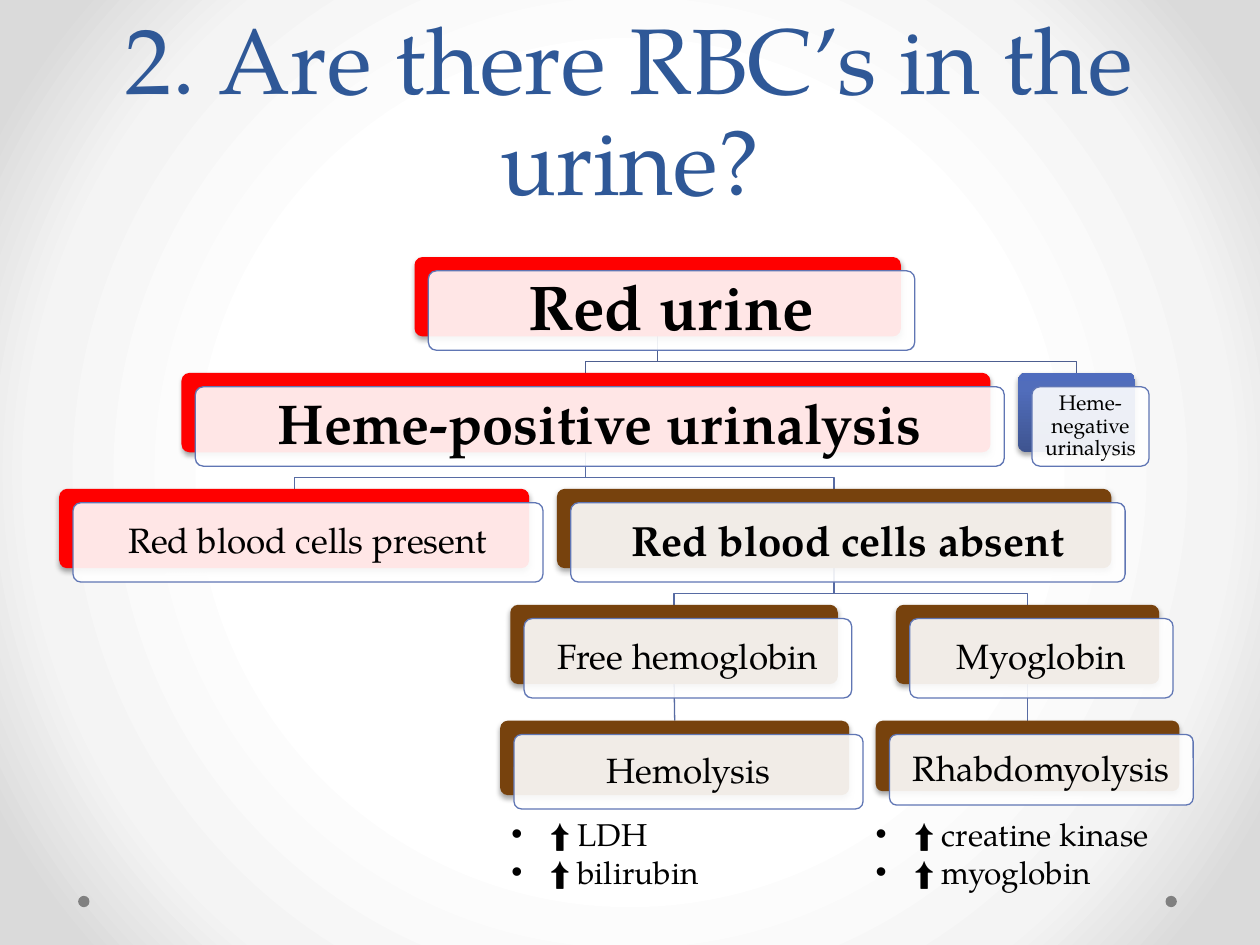
from lxml import etree
from pptx import Presentation
from pptx.dml.color import RGBColor
from pptx.enum.dml import MSO_LINE
from pptx.enum.shapes import MSO_CONNECTOR, MSO_SHAPE
from pptx.enum.text import MSO_ANCHOR, MSO_AUTO_SIZE, PP_ALIGN
from pptx.oxml import parse_xml
from pptx.oxml.ns import qn
from pptx.util import Inches, Pt

ROUNDED, OVAL = MSO_SHAPE.ROUNDED_RECTANGLE, MSO_SHAPE.OVAL
STRAIGHT, SOLID = MSO_CONNECTOR.STRAIGHT, MSO_LINE.SOLID
MIDDLE, BOTTOM = MSO_ANCHOR.MIDDLE, MSO_ANCHOR.BOTTOM
CENTER, LEFT = PP_ALIGN.CENTER, PP_ALIGN.LEFT
FIT_SHAPE = MSO_AUTO_SIZE.SHAPE_TO_FIT_TEXT
FONT, ARROW_FONT = "TeX Gyre Pagella", "Arial"
BLACK = RGBColor(0, 0, 0)
WHITE = RGBColor(255, 255, 255)
GRAY = RGBColor(0x80, 0x80, 0x80)
TITLE_BLUE = RGBColor(0x2F, 0x58, 0x97)
RED = RGBColor(0xFF, 0, 0)
BROWN = RGBColor(0x77, 0x42, 0x0D)
OUTLINE = RGBColor(0x60, 0x76, 0xB4)
TOP_BRANCH = RGBColor(0x4D, 0x5E, 0x90)
BRANCH = RGBColor(0x57, 0x6B, 0xA3)
DRAWING = 'xmlns:a="http://schemas.openxmlformats.org/drawingml/2006/main"'
RADIAL = ('<a:path path="circle"><a:fillToRect l="50000" t="50000" '
          'r="50000" b="50000"/></a:path>')
UPWARD = '<a:lin ang="16200000" scaled="0"/>'
PAGE_STOPS = [(50, "FFFFFF"), (76, "F4F4F4"), (92, "DADADA")]
BLUE_STOPS = [(0, "3E5490"), (80, "516DBB"), (100, "4F6CBE")]
FIRST_TOP, ROW_STEP, OFFSET = 2.04, 0.92, 0.11

# name: (row, left, width, height, color, size, bold, inset)
NODES = {
    "Red urine": (0, 3.29, 3.86, 0.63, RED, 36, True, 0.15),
    "Heme-positive urinalysis": (1, 1.44, 6.42, 0.63, RED, 32, True, 0.13),
    "Red blood cells present": (2, 0.47, 3.73, 0.63, RED, 20, False, 0.08),
    "Red blood cells absent": (2, 4.42, 4.4, 0.63, BROWN, 24, True, 0.1),
    "Free hemoglobin": (3, 4.05, 2.6, 0.63, BROWN, 20, False, 0.08),
    "Hemolysis": (4, 3.97, 2.77, 0.59, BROWN, 20, False, 0.08),
    "Myoglobin": (3, 7.11, 2.09, 0.63, BROWN, 20, False, 0.08),
    "Rhabdomyolysis": (4, 6.95, 2.41, 0.56, BROWN, 20, False, 0.08),
    "Heme-negative urinalysis": (1, 8.08, 0.93, 0.63, None, 12, False, 0.05),
}
ELBOWS = [
    ("Red urine", "Heme-negative urinalysis", TOP_BRANCH),
    ("Red blood cells absent", "Myoglobin", BRANCH),
    ("Red blood cells absent", "Free hemoglobin", BRANCH),
    ("Heme-positive urinalysis", "Red blood cells absent", BRANCH),
    ("Heme-positive urinalysis", "Red blood cells present", BRANCH),
    ("Red urine", "Heme-positive urinalysis", TOP_BRANCH),
]
STEMS = [("Myoglobin", "Rhabdomyolysis"), ("Free hemoglobin", "Hemolysis")]


def set_gradient(fill, owner, stops, direction):
    fill.gradient()
    marks = "".join(f'<a:gs pos="{place * 1000}"><a:srgbClr val="{color}"/></a:gs>'
                    for place, color in stops)
    old = owner.find(".//" + qn("a:gradFill"))
    old.getparent().replace(old, parse_xml(
        f'<a:gradFill {DRAWING} rotWithShape="1"><a:gsLst>{marks}</a:gsLst>'
        f'{direction}</a:gradFill>'))


def add_span(para, text, *, size, font=FONT, color=BLACK, bold=False):
    span = para.add_run()
    span.text = text
    span.font.name = font
    span.font.size = Pt(size)
    span.font.bold = bold
    span.font.color.rgb = color


def write_text(frame, text, *, spacing, anchor, inset=None, **style):
    frame.word_wrap = True
    frame.vertical_anchor = anchor
    if inset is not None:
        frame.margin_left = frame.margin_right = Inches(inset)
        frame.margin_top = frame.margin_bottom = Inches(inset)
    para = frame.paragraphs[0]
    para.alignment = CENTER
    para.line_spacing = spacing
    add_span(para, text, **style)


def add_plain(page, kind, left, top, width, height):
    shape = page.shapes.add_shape(
        kind, Inches(left), Inches(top), Inches(width), Inches(height))
    shape.shadow.inherit = False
    shape.line.fill.background()
    if kind == ROUNDED:
        shape.adjustments[0] = 0.1
    return shape


def add_node(page, name):
    row, left, width, height, color, size, bold, inset = NODES[name]
    top = FIRST_TOP + row * ROW_STEP
    box = add_plain(page, ROUNDED, left, top, width, height)
    if color is None:
        set_gradient(box.fill, box.element, BLUE_STOPS, UPWARD)
    else:
        box.fill.solid()
        box.fill.fore_color.rgb = color
    box.element.spPr.find(qn("a:effectLst")).append(parse_xml(
        f'<a:outerShdw {DRAWING} blurRad="{Pt(3.1)}" dist="{Pt(1.8)}" '
        'dir="5400000" rotWithShape="0"><a:srgbClr val="000000">'
        '<a:alpha val="35000"/></a:srgbClr></a:outerShdw>'))
    panel = add_plain(page, ROUNDED, left + OFFSET, top + OFFSET, width, height)
    panel.fill.solid()
    panel.fill.fore_color.rgb = WHITE
    tint = panel.element.spPr.find(qn("a:solidFill"))[0]
    etree.SubElement(tint, qn("a:alpha"), val="90000")
    panel.line.color.rgb = OUTLINE
    panel.line.width = Pt(0.75)
    write_text(panel.text_frame, name, spacing=0.9, anchor=MIDDLE,
               inset=inset + 0.02, size=size, bold=bold)
    return box


def link_ends(parent, child):
    row, left, width, height = NODES[parent][:4]
    child_row, child_left, child_width = NODES[child][:3]
    start = (left + width / 2, FIRST_TOP + row * ROW_STEP + height)
    end = (child_left + child_width / 2, FIRST_TOP + child_row * ROW_STEP)
    return start, end


def add_elbow(page, parent, child, color):
    (start_x, start_y), (end_x, end_y) = link_ends(parent, child)
    bend = start_y + 0.2
    builder = page.shapes.build_freeform(Inches(start_x), Inches(start_y))
    corners = [(start_x, bend), (end_x, bend), (end_x, end_y)]
    builder.add_line_segments([(Inches(x), Inches(y)) for x, y in corners], close=False)
    elbow = builder.convert_to_shape()
    elbow.shadow.inherit = False
    elbow.fill.background()
    elbow.line.color.rgb = color
    elbow.line.width = Pt(0.75)


def add_stem(page, parent, child):
    start, end = link_ends(parent, child)
    stem = page.shapes.add_connector(STRAIGHT, *map(Inches, start + end))
    stem.line.color.rgb = BRANCH
    stem.line.width = Pt(0.75)
    stem.line.dash_style = SOLID
    etree.SubElement(stem.element.spPr, qn("a:effectLst"))
    return stem


def add_findings(page, left, width, findings):
    box = page.shapes.add_textbox(Inches(left), Inches(6.42), Inches(width), Inches(0.71))
    frame = box.text_frame
    frame.word_wrap = False
    frame.auto_size = FIT_SHAPE
    for index, finding in enumerate(findings):
        para = frame.add_paragraph() if index else frame.paragraphs[0]
        para.alignment = LEFT
        add_span(para, "⬆", size=18, font=ARROW_FONT)
        add_span(para, " " + finding, size=18)
        settings = para._p.get_or_add_pPr()
        settings.set("marL", str(Inches(0.31)))
        settings.set("indent", str(Inches(-0.31)))
        etree.SubElement(settings, qn("a:buFont"), typeface=ARROW_FONT)
        etree.SubElement(settings, qn("a:buChar"), char="•")


def main():
    deck = Presentation()
    deck.slide_width, deck.slide_height = Inches(10), Inches(7.5)
    page = deck.slides.add_slide(deck.slide_layouts[6])
    set_gradient(page.background.fill, page.element, PAGE_STOPS, RADIAL)
    for left in (9.25, 0.62):
        dot = add_plain(page, OVAL, left, 7.11, 0.09, 0.09)
        dot.fill.solid()
        dot.fill.fore_color.rgb = GRAY
    title = page.shapes.add_textbox(Inches(0.5), Inches(0), Inches(9), Inches(1.75))
    write_text(title.text_frame, "2. Are there RBC’s in the urine?", spacing=Pt(58),
               anchor=BOTTOM, size=53, color=TITLE_BLUE)
    for parent, child, color in ELBOWS:
        add_elbow(page, parent, child, color)
    stems = [add_stem(page, parent, child) for parent, child in STEMS]
    boxes = {name: add_node(page, name) for name in NODES}
    for stem, (parent, child) in zip(stems, STEMS):
        stem.begin_connect(boxes[parent], 2)
        stem.end_connect(boxes[child], 0)
    add_findings(page, 3.96, 1.77, ["LDH", "bilirubin"])
    add_findings(page, 6.85, 2.45, ["creatine kinase", "myoglobin"])
    deck.save("out.pptx")


if __name__ == "__main__":
    main()
